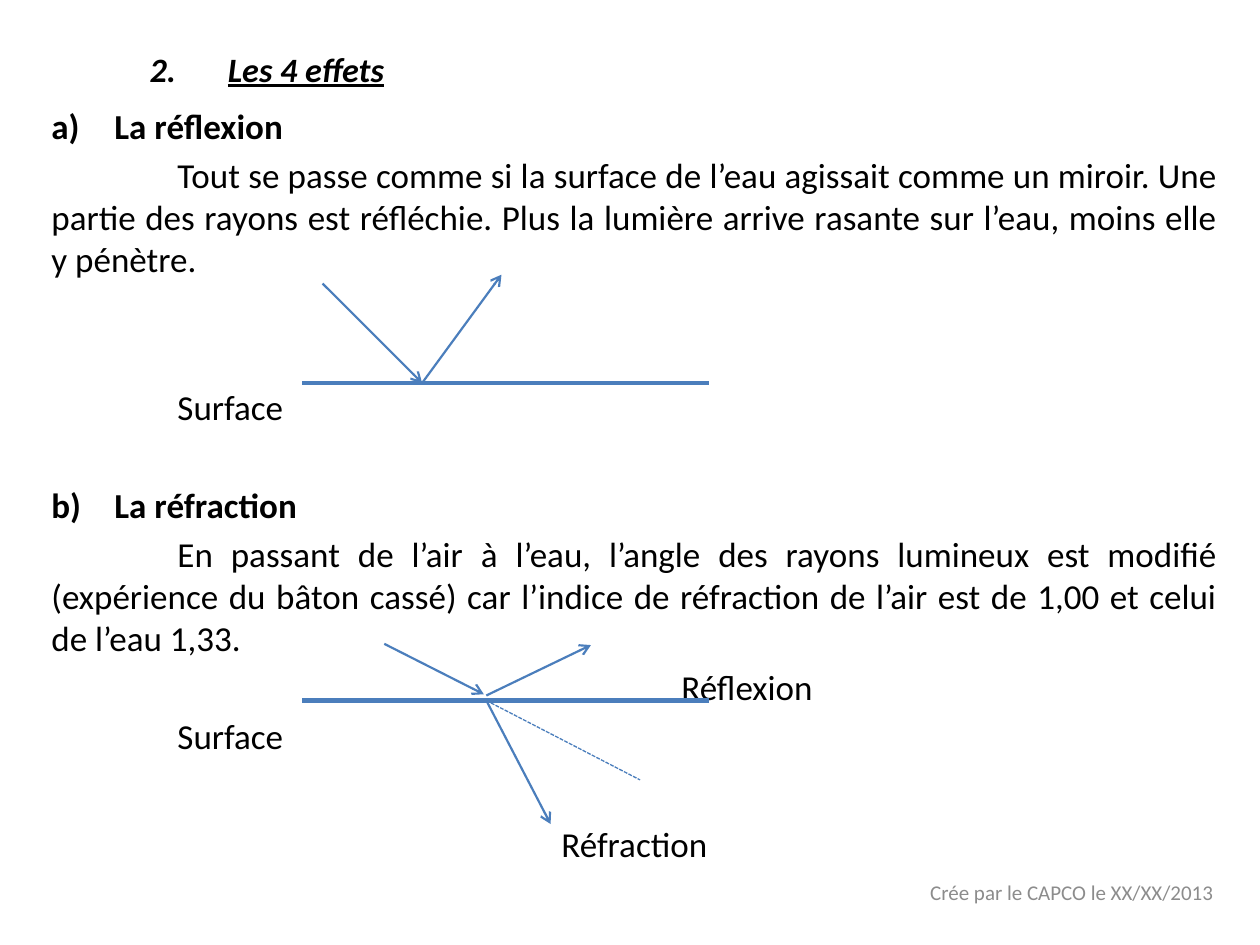
from dataclasses import dataclass

from lxml.etree import SubElement
from pptx import Presentation
from pptx.dml.color import RGBColor
from pptx.enum.dml import MSO_LINE_DASH_STYLE as Dash
from pptx.enum.shapes import MSO_CONNECTOR_TYPE as Connector
from pptx.enum.text import MSO_ANCHOR as Anchor, PP_ALIGN as Align
from pptx.oxml.ns import qn
from pptx.util import Inches, Pt


@dataclass(frozen=True)
class Theme:
    font: str = "Calibri"
    ink: str = "000000"
    muted: str = "8C8C8C"
    ray: str = "4B7EBC"
    body: float = 20
    title: float = 19.5
    footer: float = 12
    gap: float = 4
    row: float = 28.2
    surface_width: float = 2.5
    ray_width: float = 1.25
    dash_width: float = 0.75


THEME = Theme()
COLUMNS, ROWS = 100, 75
WIDTH, HEIGHT = Inches(10), Inches(7.5)

HEADING = {"bold": True, "hanging": 5}
PROSE = {"first": 10}
BODY = [
    ("La réflexion", {**HEADING, "number": ("alphaLcParenR", 1), "before": 0}),
    ("Tout se passe comme si la surface de l’eau agissait comme un miroir. "
     "Une partie des rayons est réfléchie. Plus la lumière arrive rasante sur "
     "l’eau, moins elle y pénètre.", PROSE),
    ("Surface", {"left": 10, "skip": 2}),
    ("La réfraction", {**HEADING, "number": ("alphaLcParenR", 2), "skip": 1}),
    ("En passant de l’air à l’eau, l’angle des rayons lumineux est modifié "
     "(expérience du bâton cassé) car l’indice de réfraction de l’air est de "
     "1,00 et celui de l’eau 1,33.", PROSE),
    ("Réflexion", {"left": 50}),
    ("Surface", {"left": 10}),
    ("Réfraction", {"align": Align.CENTER, "skip": 1.2}),
]
FOOTER = [("Crée par le CAPCO le XX/XX/2013",
           {"align": Align.RIGHT, "size": THEME.footer, "color": THEME.muted})]
TITLE = [("Les 4 effets",
          {"align": Align.LEFT, "size": THEME.title, "bold": True, "italic": True,
           "underline": True, "hanging": 6.2, "number": ("arabicPeriod", 2)})]
BOXES = [
    (BODY, (3.1, 7.8, 94.5, 62), Anchor.TOP),
    (FOOTER, (65.6, 68.8, 31.7, 4), Anchor.MIDDLE),
    (TITLE, (10.9, 3.1, 43, 4.7), Anchor.MIDDLE),
]

SURFACE_SPAN = (24, 56.3)
DIAGRAMS = [
    {"surface": 30.4, "rays": [
        ((25.6, 22.5), (33.5, 30.4), "arrow"),
        ((33.5, 30.4), (39.8, 21.8), "arrow")]},
    {"surface": 55.6, "rays": [
        ((30.5, 51.1), (38.4, 55.1), "arrow"),
        ((38.6, 55.6), (43.7, 65.4), "arrow"),
        ((38.6, 55.2), (46.9, 51.2), "arrow"),
        ((38.6, 55.6), (50.8, 61.9), "dash")]},
]


def across(columns):
    return round(WIDTH * columns / COLUMNS)


def down(rows):
    return round(HEIGHT * rows / ROWS)


def format_paragraph(para, style):
    hanging = style.get("hanging", 0)
    properties = para._p.get_or_add_pPr()
    properties.set("marL", str(across(style.get("left", hanging))))
    properties.set("indent", str(across(style.get("first", -hanging))))
    if "number" in style:
        scheme, start = style["number"]
        SubElement(properties, qn("a:buAutoNum"), type=scheme, startAt=str(start))
    para.alignment = style.get("align", Align.JUSTIFY)
    para.space_before = Pt(style.get("before", THEME.gap) + style.get("skip", 0) * THEME.row)
    font = para.font
    font.name = THEME.font
    font.size = Pt(style.get("size", THEME.body))
    font.color.rgb = RGBColor.from_string(style.get("color", THEME.ink))
    font.bold = style.get("bold", False)
    font.italic = style.get("italic", False)
    font.underline = style.get("underline", False)


def add_text(page, content, place, anchor):
    left, top, width, height = place
    box = page.shapes.add_textbox(across(left), down(top), across(width), down(height))
    frame = box.text_frame
    frame.word_wrap = True
    frame.vertical_anchor = anchor
    for index, (text, style) in enumerate(content):
        para = frame.add_paragraph() if index else frame.paragraphs[0]
        para.text = text
        first_style = {} if index else {"before": 0}
        format_paragraph(para, {**style, **first_style})


def add_line(page, start, end, width, kind="plain"):
    line = page.shapes.add_connector(
        Connector.STRAIGHT, across(start[0]), down(start[1]), across(end[0]), down(end[1]))
    line.line.color.rgb = RGBColor.from_string(THEME.ray)
    line.line.width = Pt(width)
    if kind == "dash":
        line.line.dash_style = Dash.SQUARE_DOT
    if kind == "arrow":
        SubElement(line.line._get_or_add_ln(), qn("a:tailEnd"), type="arrow")
    SubElement(line._element.spPr, qn("a:effectLst"))


def main():
    deck = Presentation()
    deck.slide_width, deck.slide_height = WIDTH, HEIGHT
    page = deck.slides.add_slide(deck.slide_layouts[6])
    for content, place, anchor in BOXES:
        add_text(page, content, place, anchor)
    for diagram in DIAGRAMS:
        start, end = ((column, diagram["surface"]) for column in SURFACE_SPAN)
        add_line(page, start, end, THEME.surface_width)
        for source, target, kind in diagram["rays"]:
            width = THEME.dash_width if kind == "dash" else THEME.ray_width
            add_line(page, source, target, width, kind)
    deck.save("out.pptx")


if __name__ == "__main__":
    main()
